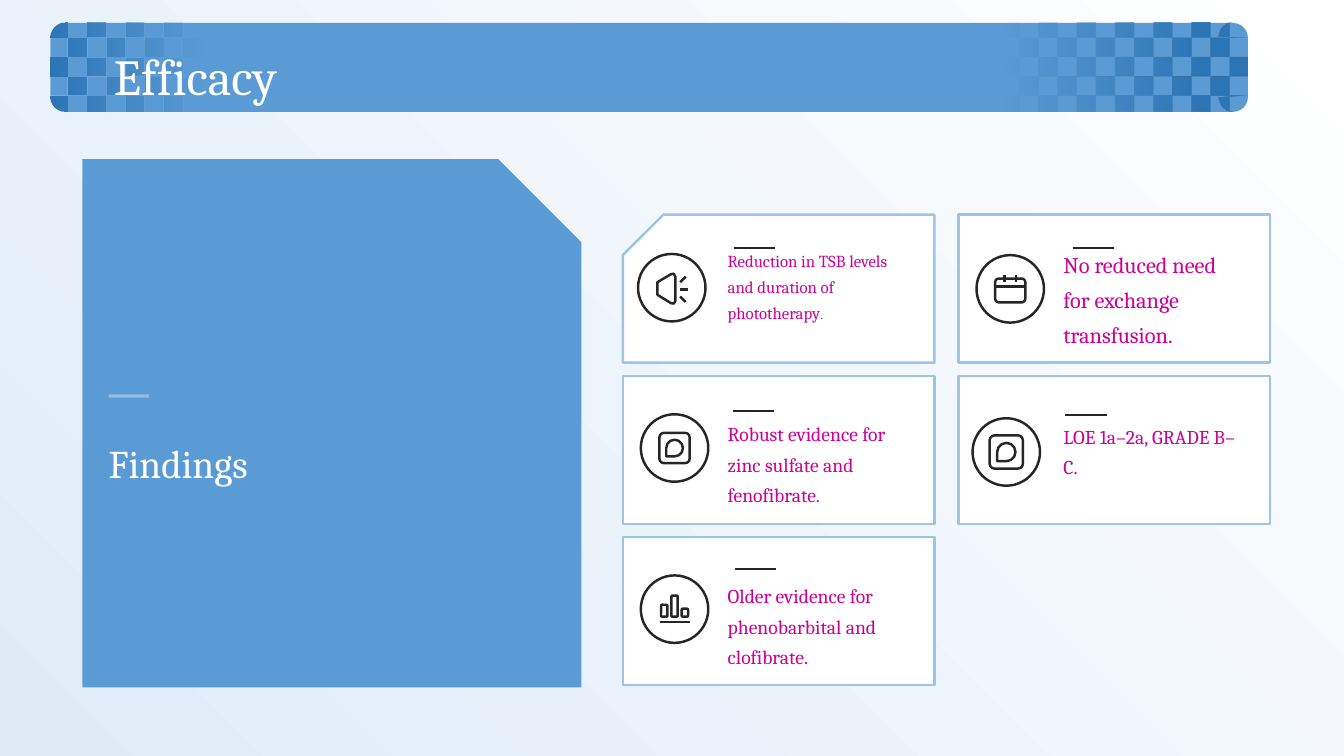
import math

import lxml.etree
import pptx
import pptx.dml.color
import pptx.enum.shapes
import pptx.enum.text
import pptx.oxml.ns
import pptx.util

Cm = pptx.util.Cm
Pt = pptx.util.Pt
SHAPE = pptx.enum.shapes.MSO_SHAPE
ANCHOR = pptx.enum.text.MSO_ANCHOR
FIT = pptx.enum.text.MSO_AUTO_SIZE

COLORS = {
    "white": "FFFFFF", "mist": "DEEBF7", "sky": "9DC3E6", "blue": "5B9BD5",
    "navy": "2E75B6", "ink": "262626", "pink": "CC0099",
}
FACE = "Cambria"

# Banner edges and corner radius, and the checker cell size, in cm
LEFT, TOP, RIGHT, BASE, CURVE = 1.27, 0.58, 31.45, 2.82, 0.37
CELL = 0.48
ROWS = [TOP] + [0.97 + CELL * n for n in range(4)] + [BASE]


def rgb(name):
    return pptx.dml.color.RGBColor.from_string(COLORS[name])


def fade(part, share):
    """Set the opacity, in percent, of the first colour inside an XML part."""
    color = next(part.iter(pptx.oxml.ns.qn("a:srgbClr")))
    alpha = lxml.etree.SubElement(color, pptx.oxml.ns.qn("a:alpha"))
    alpha.set("val", str(share * 1000))


# Shapes and lines
def paint(shape, fill=None, line=None, width=1.75):
    shape.shadow.inherit = False
    if fill:
        shape.fill.solid()
        shape.fill.fore_color.rgb = rgb(fill)
    else:
        shape.fill.background()
    if line:
        shape.line.color.rgb = rgb(line)
        shape.line.width = Pt(width)
    else:
        shape.line.fill.background()
    return shape


def blend(shape, stops, angle=0):
    shape.fill.gradient()
    shape.fill.gradient_angle = angle
    for stop, (spot, name) in zip(shape.fill.gradient_stops, stops):
        stop.position = spot
        stop.color.rgb = rgb(name)


def add_box(slide, kind, x, y, w, h, **look):
    shape = slide.shapes.add_shape(kind, Cm(x), Cm(y), Cm(w), Cm(h))
    return paint(shape, **look)


def add_path(slide, loops, **look):
    loops = [[(Cm(x), Cm(y)) for x, y in loop] for loop in loops]
    pen = slide.shapes.build_freeform(*loops[0][0])
    for loop in loops:
        pen.move_to(*loop[0])
        pen.add_line_segments(loop[1:], close=True)
    return paint(pen.convert_to_shape(), **look)


def add_rule(slide, x1, y1, x2, y2, color="ink", width=1.5):
    straight = pptx.enum.shapes.MSO_CONNECTOR.STRAIGHT
    rule = slide.shapes.add_connector(straight, Cm(x1), Cm(y1), Cm(x2), Cm(y2))
    rule.line.color.rgb = rgb(color)
    rule.line.width = Pt(width)
    props = rule._element.spPr
    lxml.etree.SubElement(props, pptx.oxml.ns.qn("a:effectLst"))
    return props


# Text
def set_text(frame, text, size, color, space, anchor, fit=FIT.NONE):
    frame.margin_left = frame.margin_right = 0
    frame.margin_top = frame.margin_bottom = 0
    frame.word_wrap = True
    frame.auto_size = fit
    frame.vertical_anchor = anchor
    line = frame.paragraphs[0]
    line.text = text
    line.alignment = pptx.enum.text.PP_ALIGN.LEFT
    line.line_spacing = space
    line.font.name = FACE
    line.font.size = Pt(size)
    line.font.color.rgb = rgb(color)
    return line


def add_text(slide, x, y, w, h, *style):
    box = slide.shapes.add_textbox(Cm(x), Cm(y), Cm(w), Cm(h))
    return set_text(box.text_frame, *style)


# Icons, drawn around a centre point
def draw_horn(slide, x, y, scale):
    bell = [(-.36, -.14), (-.02, -.34), (.05, -.35), (.09, -.28),
            (.09, .34), (.05, .4), (-.02, .39), (-.36, .18)]
    add_path(slide, [[(x + a, y + b) for a, b in bell]], line="ink")
    for a, b, c, d in [(.21, -.14, .35, -.28), (.2, .04, .42, .04),
                       (.21, .22, .35, .36)]:
        add_rule(slide, x + a, y + b, x + c, y + d, width=1.75)


def draw_dates(slide, x, y, scale):
    page = add_box(slide, SHAPE.ROUNDED_RECTANGLE, x - .38, y - .26, .76, .6,
                   line="ink")
    page.adjustments[0] = 0.15
    add_rule(slide, x - .38, y - .06, x + .38, y - .06, width=1.75)
    for a in (-.15, .15):
        add_rule(slide, x + a, y - .34, x + a, y - .17, width=1.75)


def draw_pen(slide, x, y, scale):
    for kind, size in ((SHAPE.ROUNDED_RECTANGLE, .76), (SHAPE.TEAR, .42)):
        side = size * scale
        part = add_box(slide, kind, x - side / 2, y - side / 2, side, side,
                       line="ink")
        if kind == SHAPE.TEAR:
            part.rotation = 180
        else:
            part.adjustments[0] = 0.14


def draw_bars(slide, x, y, scale):
    for a, top in ((-.26, -.11), (0, -.34), (.26, -.01)):
        add_box(slide, SHAPE.ROUNDED_RECTANGLE, x + a - .08, y + top, .16,
                .19 - top, line="ink")
    add_rule(slide, x - .38, y + .33, x + .38, y + .33, width=1.75)


# column, row, icon, icon scale, circle, rule start, text top and height, size
CARDS = [
    (0, 0, draw_horn, 1, (16.08, 6.4), (18.49, 6.25), (6.15, 2.01), 12,
     "Reduction in TSB levels and duration of phototherapy"),
    (1, 0, draw_dates, 1, (24.61, 6.43), (27.03, 6.25), (6.17, 2.57), 16,
     "No reduced need for exchange transfusion."),
    (0, 1, draw_pen, 1, (16.15, 10.44), (18.47, 10.36), (10.44, 2.34), 14,
     "Robust evidence for zinc sulfate and fenofibrate."),
    (1, 1, draw_pen, 1.1, (24.51, 10.54), (26.85, 10.46), (10.54, 1.5), 14,
     "LOE 1a–2a, GRADE B–C."),
    (0, 2, draw_bars, 1, (16.15, 14.5), (18.52, 14.33), (14.53, 2.34), 14,
     "Older evidence for phenobarbital and clofibrate."),
]


def add_card(slide, col, row, draw, scale, ring, rule, span, size, text):
    first = (col, row) == (0, 0)
    x, y = 15.7 + 8.46 * col, 5.41 + 4.06 * row
    kind = SHAPE.SNIP_1_RECTANGLE if first else SHAPE.RECTANGLE
    card = add_box(slide, kind, x, y, 7.85, 3.73, fill="white", line="sky")
    if first:
        card.adjustments[0] = 0.273
        card._element.spPr.xfrm.set("flipH", "1")
    line = add_text(slide, x + 2.64, span[0], 4.62, span[1], text, size,
                    "pink", 1.3, ANCHOR.MIDDLE, FIT.SHAPE_TO_FIT_TEXT)
    if first:
        dot = line.add_run()
        dot.text = "."
        dot.font.name = "Manrope"
        dot.font.size = Pt(9.6)
        dot.font.color.rgb = rgb("ink")
    add_rule(slide, *rule, rule[0] + 1.04, rule[1])
    add_box(slide, SHAPE.OVAL, *ring, 1.7, 1.7, line="ink")
    draw(slide, ring[0] + .85, ring[1] + .85, scale)


# Banner
def bend(x, y, turn):
    """Return the point, or an arc where it is a corner of the banner."""
    if x not in (LEFT, RIGHT) or y not in (TOP, BASE):
        return [(x, y)]
    a = x + CURVE if x == LEFT else x - CURVE
    b = y + CURVE if y == TOP else y - CURVE
    angles = [math.radians(turn + 15 * n) for n in range(7)]
    return [(a + CURVE * math.cos(t), b + CURVE * math.sin(t)) for t in angles]


def add_check(slide, edges, odd, stops):
    loops = []
    for i, (x1, x2) in enumerate(zip(edges, edges[1:])):
        for j, (y1, y2) in enumerate(zip(ROWS, ROWS[1:])):
            if (i + j) % 2 == odd:
                loops.append(bend(x1, y1, 180) + bend(x2, y1, 270)
                             + bend(x2, y2, 0) + bend(x1, y2, 90))
    check = add_path(slide, loops)
    blend(check, [(spot, "navy") for spot in stops])
    fade(list(check._element.spPr.iter(pptx.oxml.ns.qn("a:gs")))[-1], 0)


def add_banner(slide):
    add_box(slide, SHAPE.ROUNDED_RECTANGLE, LEFT, TOP, RIGHT - LEFT,
            BASE - TOP, fill="blue")
    near = [LEFT] + [1.71 + CELL * n for n in range(8)]
    far = [30.99 - CELL * n for n in range(13, -1, -1)] + [RIGHT]
    add_check(slide, near, 0, (0, 1))
    add_check(slide, far[::-1], 0, (0.17, 0.91))
    # The far checker darkens towards the right
    slide.shapes[-1].fill.gradient_angle = 180
    title = slide.shapes.title
    title.left, title.top, title.width, title.height = map(
        Cm, (2.87, 0.91, 21.39, 1.5))
    set_text(title.text_frame, "Efficacy", 36, "white", 1.3, ANCHOR.MIDDLE)
    slide.shapes._spTree.append(title._element)


def main():
    deck = pptx.Presentation()
    deck.slide_width, deck.slide_height = Cm(33.87), Cm(19.05)
    slide = deck.slides.add_slide(deck.slide_layouts[5])
    back = add_box(slide, SHAPE.RECTANGLE, 0, 0, 33.87, 19.05)
    blend(back, [(0, "white"), (1, "mist")], 225)
    # Findings panel
    add_box(slide, SHAPE.SNIP_1_RECTANGLE, 2.08, 4.01, 12.57, 13.31,
            fill="blue")
    add_text(slide, 2.74, 10.95, 11.3, 5.54, "Findings", 28, "white", 1.1,
             ANCHOR.TOP)
    fade(add_rule(slide, 2.74, 9.98, 3.76, 9.98, "white", 2.25), 35)
    for card in CARDS:
        add_card(slide, *card)
    add_banner(slide)
    deck.save("out.pptx")


if __name__ == "__main__":
    main()
